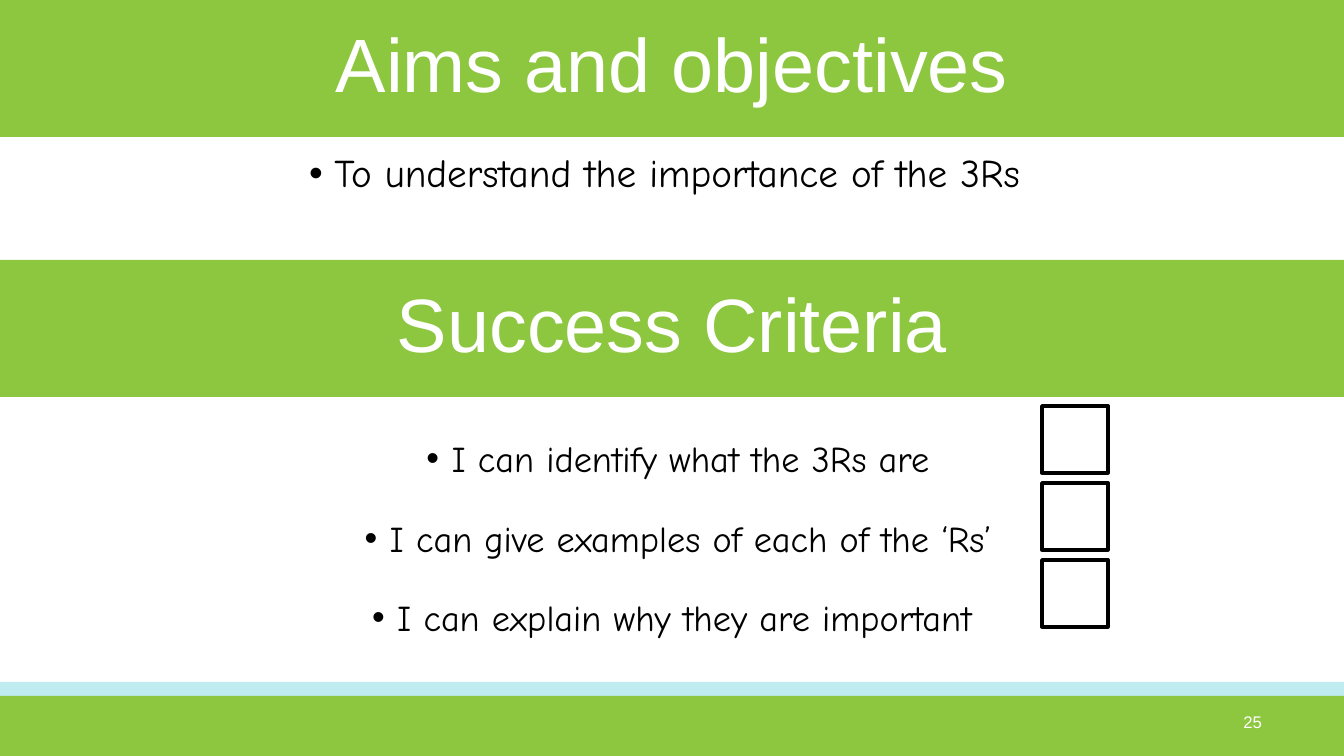
import pptx
import pptx.util
import pptx.dml.color
import pptx.enum.shapes
import pptx.enum.text
import pptx.oxml.ns
import lxml.etree

WIDE, HIGH = 1344, 756
SCALE = 12192000 / WIDE  # EMU in one px
COLORS = {"green": "8DC63F", "aqua": "20BFD0", "white": "FFFFFF", "black": "000000"}
HEAD, HAND = "Arial", "Comic Neue"
BAND = 137
ALIGN = pptx.enum.text.PP_ALIGN
ANCHOR = pptx.enum.text.MSO_ANCHOR
qn = pptx.oxml.ns.qn


def px(n):
    return pptx.util.Emu(round(n * SCALE))


def color(name):
    return pptx.dml.color.RGBColor.from_string(COLORS[name])


def place(shape, x, y, w, h):
    shape.left, shape.top, shape.width, shape.height = map(px, (x, y, w, h))
    # Bring to the front
    shape.element.getparent().append(shape.element)


def bullet(para):
    props = para._p.get_or_add_pPr()
    props.set("marL", "228600")
    props.set("indent", "-228600")
    font = lxml.etree.SubElement(props, qn("a:buFont"))
    font.set("typeface", HEAD)
    mark = lxml.etree.SubElement(props, qn("a:buChar"))
    mark.set("char", "•")


def write(shape, lines, size, font=HEAD, ink="white", align=ALIGN.CENTER,
          anchor=ANCHOR.MIDDLE, space=0.9, before=0, dots=False):
    frame = shape.text_frame
    frame.word_wrap = True
    frame.auto_size = pptx.enum.text.MSO_AUTO_SIZE.NONE
    frame.vertical_anchor = anchor
    frame.text = "\n".join(lines)
    for para in frame.paragraphs:
        para.alignment = align
        para.line_spacing = space
        para.space_before = pptx.util.Pt(before)
        if dots:
            bullet(para)
        for run in para.runs:
            run.font.size = pptx.util.Pt(size)
            run.font.name = font
            run.font.color.rgb = color(ink)


def listing(shape, lines, size, space):
    write(shape, lines, size, font=HAND, ink="black", anchor=ANCHOR.TOP,
          space=space, before=10, dots=True)


def rect(slide, x, y, w, h, fill=None, alpha=None, line=None):
    kind = pptx.enum.shapes.MSO_SHAPE.RECTANGLE
    shape = slide.shapes.add_shape(kind, px(x), px(y), px(w), px(h))
    shape.shadow.inherit = False
    if fill:
        shape.fill.solid()
        shape.fill.fore_color.rgb = color(fill)
    else:
        shape.fill.background()
    if alpha:
        tint = shape.element.spPr.find(".//" + qn("a:srgbClr"))
        lxml.etree.SubElement(tint, qn("a:alpha")).set("val", str(alpha * 1000))
    if line:
        shape.line.color.rgb = color(line)
        shape.line.width = pptx.util.Pt(2.5)
    else:
        shape.line.fill.background()
    return shape


def textbox(slide, x, y, w, h):
    return slide.shapes.add_textbox(px(x), px(y), px(w), px(h))


def main():
    deck = pptx.Presentation()
    deck.slide_width, deck.slide_height = px(WIDE), px(HIGH)
    slide = deck.slides.add_slide(deck.slide_layouts[1])
    title, body = slide.placeholders

    # Background bands
    rect(slide, 0, 682, WIDE, 24, fill="aqua", alpha=29)
    rect(slide, 0, 0, WIDE, BAND, fill="green")
    rect(slide, 0, 696, WIDE, HIGH - 696, fill="green")

    # Aims
    place(title, 0, 0, WIDE, BAND)
    write(title, ["Aims and objectives"], 54)
    place(body, 93, 149, 1143, 66)
    listing(body, ["To understand the importance of the 3Rs"], 28, 0.9)

    # Slide number
    number = textbox(slide, 970, 702, 302, 40)
    write(number, ["25"], 12, align=ALIGN.RIGHT, space=1.0)

    # Success criteria
    band = rect(slide, 0, 260, WIDE, BAND, fill="green")
    write(band, ["Success Criteria"], 54)
    goals = ["I can identify what the 3Rs are",
             "I can give examples of each of the ‘Rs’",
             "I can explain why they are important "]
    listing(textbox(slide, 105, 410, 1146, 229), goals, 25.9, 1.5)

    # Tick boxes, one for each goal
    for i in range(len(goals)):
        rect(slide, 1042, 406 + 77 * i, 66, 67, line="black")

    deck.save("out.pptx")


if __name__ == "__main__":
    main()
